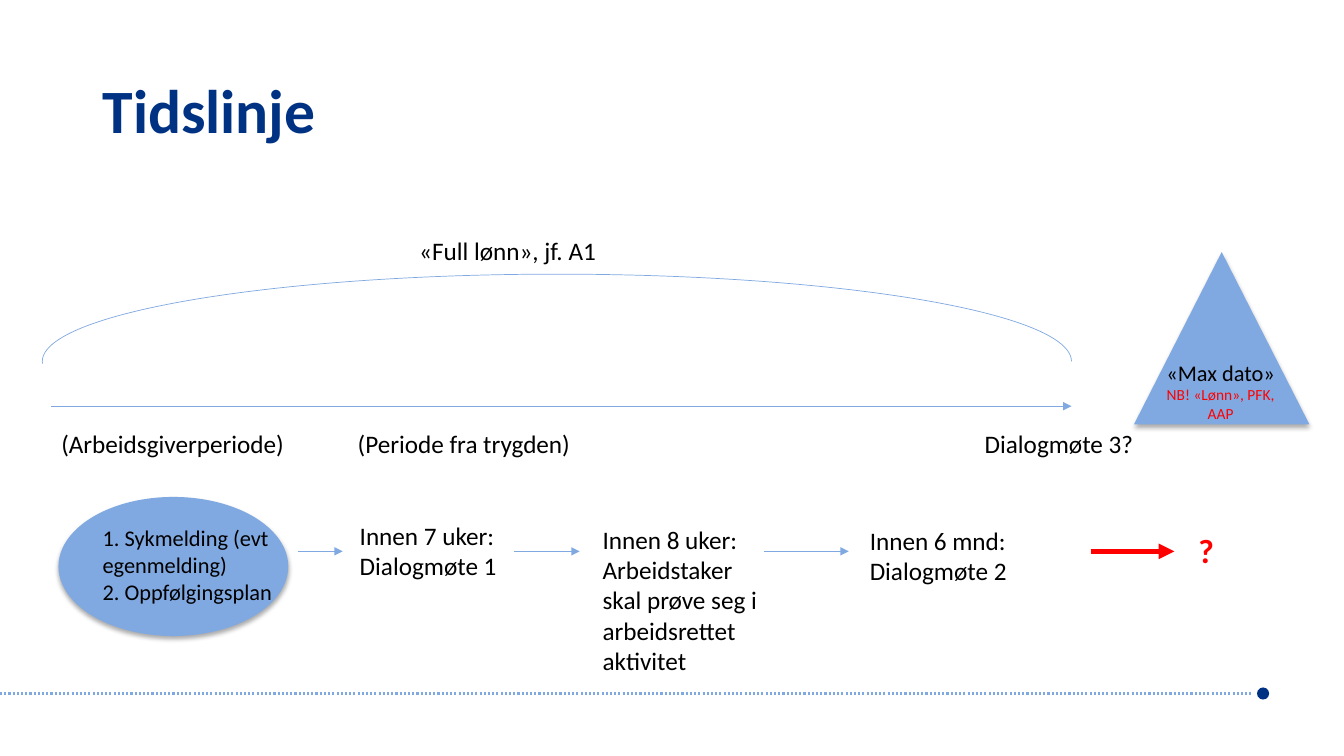
from lxml import etree
from pptx import Presentation
from pptx.dml.color import RGBColor
from pptx.enum.dml import MSO_LINE_DASH_STYLE as DASH
from pptx.enum.shapes import MSO_CONNECTOR, MSO_SHAPE
from pptx.enum.text import MSO_ANCHOR, PP_ALIGN
from pptx.oxml import parse_xml
from pptx.oxml.ns import nsdecls, qn
from pptx.util import Inches, Pt

# Grid: square cells of a tenth of an inch, 133.33 columns by 75 rows
CELL = Inches(0.1)
COLS, ROWS = 133.33, 75
NAVY, BLUE, RED, BLACK = "003283", "81A9E1", "FF0000", "000000"
rgb = RGBColor.from_string

prs = Presentation()
prs.slide_width, prs.slide_height = int(COLS * CELL), ROWS * CELL
s = prs.slides.add_slide(prs.slide_layouts[6])


def add_text(x, y, w, h, *paras, align=PP_ALIGN.LEFT, bold=False):
    """Add a text box; each paragraph is (text, size, colour)."""
    tf = s.shapes.add_textbox(*(int(v * CELL) for v in (x, y, w, h))).text_frame
    tf.word_wrap = True
    for i, (text, size, colour) in enumerate(paras):
        p = tf.add_paragraph() if i else tf.paragraphs[0]
        p.alignment = align
        r = p.add_run()
        r.text = text
        r.font.name, r.font.size, r.font.bold = "Calibri", Pt(size), bold
        r.font.color.rgb = rgb(colour)
    return tf


def add_line(x1, x2, y, colour=BLUE, width=0.5, arrow=True):
    """Add a horizontal line, with an arrowhead at its right end by default."""
    ends = (int(v * CELL) for v in (x1, y, x2, y))
    cxn = s.shapes.add_connector(MSO_CONNECTOR.STRAIGHT, *ends)
    cxn.line.color.rgb, cxn.line.width = rgb(colour), Pt(width)
    if arrow:
        etree.SubElement(cxn.line._get_or_add_ln(), qn("a:tailEnd"), type="triangle")
    etree.SubElement(cxn._element.spPr, qn("a:effectLst"))
    return cxn


# Footer line, title
add_line(0, 124.2, 68.8, width=1.5, arrow=False).line.dash_style = DASH.ROUND_DOT
tf = add_text(9.2, 4, 115, 14.5, ("Tidslinje", 44, NAVY), bold=True)
tf.vertical_anchor = MSO_ANCHOR.MIDDLE
tf.paragraphs[0].line_spacing = 0.9

# Filled shapes: footer dot, end date, first step
for kind, x, y, w, h, colour, raised in (
    (MSO_SHAPE.OVAL, 124.7, 68.2, 1.2, 1.2, NAVY, False),
    (MSO_SHAPE.ISOSCELES_TRIANGLE, 112.5, 25, 17.4, 17.1, BLUE, True),
    (MSO_SHAPE.OVAL, 5.8, 49.3, 22.8, 13.8, BLUE, True),
):
    sp = s.shapes.add_shape(kind, *(int(v * CELL) for v in (x, y, w, h)))
    sp.fill.solid()
    sp.fill.fore_color.rgb = rgb(colour)
    sp.line.fill.background()
    sp.shadow.inherit = False
    if raised:
        sp._element.spPr.find(qn("a:effectLst")).append(parse_xml(
            f'<a:outerShdw {nsdecls("a")} blurRad="{Pt(3.5)}" dist="{Pt(2.2)}" '
            'dir="5400000" rotWithShape="0"><a:srgbClr val="000000">'
            '<a:alpha val="32000"/></a:srgbClr></a:outerShdw>'))

# Full pay arc above the time axis
arc = s.shapes.add_shape(
    MSO_SHAPE.ARC, *(int(v * CELL) for v in (4.2, 27.2, 102.1, 17.3)))
arc.adjustments[0], arc.adjustments[1] = 107.845, 0
arc.fill.background()
arc.line.color.rgb, arc.line.width = rgb(BLUE), Pt(0.5)
arc.shadow.inherit = False
add_text(40.6, 22.9, 37.5, 4, ("«Full lønn», jf. A1", 18, BLACK))

# Time axis and its periods
add_line(5.1, 106.3, 40.3)
for x, label in (
    (5.1, "(Arbeidsgiverperiode)"),
    (34.5, "(Periode fra trygden)"),
    (96.7, "Dialogmøte 3?"),
):
    add_text(x, 42, 26, 4, (label, 18, BLACK))

# End date
add_text(113.8, 35.1, 14.6, 7.4, ("«Max dato»", 16, BLACK),
         ("NB! «Lønn», PFK, AAP", 11, RED), align=PP_ALIGN.CENTER)

# Steps
add_text(9.2, 51.5, 25.6, 9.1, ("1. Sykmelding (evt egenmelding)", 16, BLACK),
         ("2. Oppfølgingsplan", 16, BLACK))
for x, y, w, h, step in (
    (34.7, 51.1, 25.2, 7.1, "Innen 7 uker: Dialogmøte 1"),
    (58.8, 51.5, 19.2, 16.2,
     "Innen 8 uker: Arbeidstaker skal prøve seg i arbeidsrettet aktivitet"),
    (85.3, 51.6, 15.9, 7.1, "Innen 6 mnd: Dialogmøte 2"),
):
    add_text(x, y, w, h, (step, 18, BLACK))
add_text(117.9, 52.1, 4.8, 5, ("?", 24, RED), bold=True)

# Arrows between the steps
STEP_ROW = 54.7
for x1, x2 in ((29.6, 34), (51, 57.5), (75.8, 84.2)):
    add_line(x1, x2, STEP_ROW)
add_line(108.2, 116.5, STEP_ROW, RED, 3.75)

prs.save("out.pptx")
